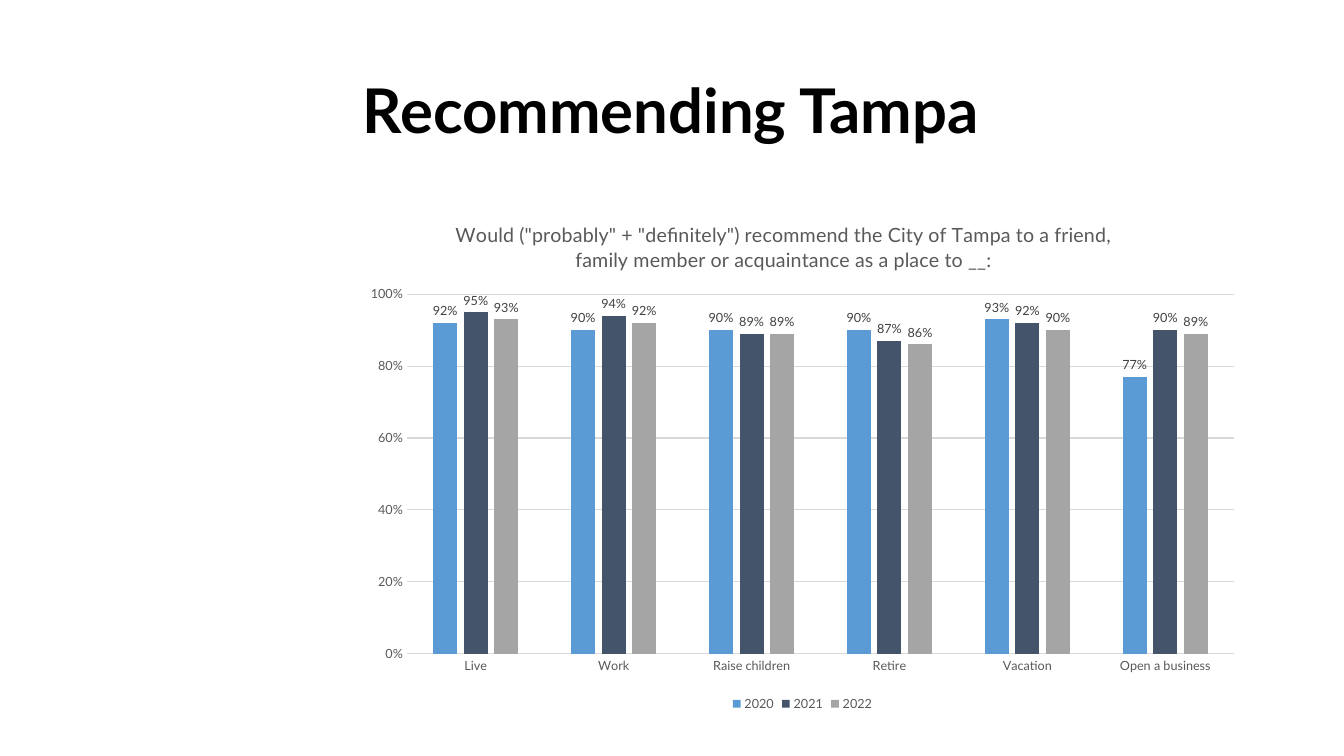
from dataclasses import dataclass

from lxml import etree
from pptx import Presentation, util as u
from pptx.chart.data import CategoryChartData
from pptx.dml.color import RGBColor
from pptx.enum import chart as ch, text
from pptx.oxml.ns import qn


@dataclass(frozen=True)
class Theme:
    font: str = "Lato"
    ink: str = "000000"
    muted: str = "595959"
    label: str = "404040"
    grid: str = "D9D9D9"
    bars: tuple = ("5B9BD5", "44546A", "A5A5A5")
    title_size: int = 44
    chart_title_size: int = 14
    small_size: int = 9


THEME = Theme()
CATEGORIES = ["Live", "Work", "Raise children", "Retire", "Vacation", "Open a business"]
RECOMMEND = {
    "2020": (0.92, 0.9, 0.9, 0.9, 0.93, 0.77),
    "2021": (0.95, 0.94, 0.89, 0.87, 0.92, 0.9),
    "2022": (0.93, 0.92, 0.89, 0.86, 0.9, 0.89),
}
QUESTION = ('Would ("probably" + "definitely") recommend the City of Tampa to a friend, '
            "family member or acquaintance as a place to __:")


def style_font(font, size=THEME.small_size, color=THEME.muted, bold=False):
    font.name, font.size, font.bold = THEME.font, u.Pt(size), bold
    font.color.rgb = RGBColor.from_string(color)


def write_text(tf, content, spacing=None, **style):
    p = tf.paragraphs[0]
    p.line_spacing = spacing
    r = p.add_run()
    r.text = content
    style_font(r.font, **style)


def style_line(line):
    line.color.rgb = RGBColor.from_string(THEME.grid)
    line.width = u.Pt(0.75)


def place(element, index, **fractions):
    """Give a chart part a manual layout in fractions of the chart area."""
    for old in element.findall(qn("c:layout")):
        element.remove(old)
    layout = etree.Element(qn("c:layout"))
    manual = etree.SubElement(layout, qn("c:manualLayout"))
    if "w" in fractions:
        etree.SubElement(manual, qn("c:layoutTarget")).set("val", "inner")
    for name in ("xMode", "yMode"):
        etree.SubElement(manual, qn(f"c:{name}")).set("val", "edge")
    for name, value in fractions.items():
        etree.SubElement(manual, qn(f"c:{name}")).set("val", str(value))
    element.insert(index, layout)


def add_heading(s, left, top, width, height):
    tf = s.shapes.add_textbox(left, top, width, height).text_frame
    tf.word_wrap = True
    tf.vertical_anchor = text.MSO_ANCHOR.MIDDLE
    write_text(tf, "Recommending Tampa", spacing=0.9, size=THEME.title_size,
               color=THEME.ink, bold=True)


def style_axes(chart):
    for axis in (chart.category_axis, chart.value_axis):
        axis.major_tick_mark = axis.minor_tick_mark = ch.XL_TICK_MARK.NONE
        style_font(axis.tick_labels.font)
    style_line(chart.category_axis.format.line)
    values = chart.value_axis
    values.minimum_scale, values.maximum_scale, values.major_unit = 0, 1, 0.2
    values.format.line.fill.background()
    style_line(values.major_gridlines.format.line)
    values.tick_labels.number_format = "0%"
    values.tick_labels.number_format_is_linked = False


def style_bars(plot):
    plot.gap_width, plot.overlap, plot.vary_by_categories = 219, -27, False
    for series, color in zip(plot.series, THEME.bars):
        series.format.fill.solid()
        series.format.fill.fore_color.rgb = RGBColor.from_string(color)
        series.invert_if_negative = False
        labels = series.data_labels
        labels.show_value = True
        labels.number_format, labels.number_format_is_linked = "0%", False
        labels.position = ch.XL_LABEL_POSITION.OUTSIDE_END
        style_font(labels.font, color=THEME.label)


def add_recommend_chart(s, left, top, width, height):
    data = CategoryChartData(number_format="0%")
    data.categories = CATEGORIES
    for year, shares in RECOMMEND.items():
        data.add_series(year, shares)
    chart = s.shapes.add_chart(ch.XL_CHART_TYPE.COLUMN_CLUSTERED,
                               left, top, width, height, data).chart
    style_font(chart.font, size=10, color=THEME.ink)
    title = chart.chart_title
    write_text(title.text_frame, QUESTION, size=THEME.chart_title_size)
    title.text_frame.paragraphs[0].alignment = text.PP_ALIGN.CENTER
    chart.has_legend = True
    chart.legend.position = ch.XL_LEGEND_POSITION.BOTTOM
    chart.legend.include_in_layout = False
    style_font(chart.legend.font)
    style_axes(chart)
    style_bars(chart.plots[0])
    root = chart.element
    place(root.find(".//" + qn("c:title")), 1, x=0.11, y=0.03)
    place(root.find(".//" + qn("c:plotArea")), 0, x=0.06, y=0.18, w=0.92, h=0.7)


def main():
    prs = Presentation()
    prs.slide_width, prs.slide_height = u.Inches(13.33), u.Inches(7.5)
    s = prs.slides.add_slide(prs.slide_layouts[6])
    left, width = u.Inches(3.5), u.Inches(8.92)
    add_heading(s, left, u.Inches(0.4), width, u.Inches(1.45))
    add_recommend_chart(s, left, u.Inches(2), width, u.Inches(5.1))
    prs.save("out.pptx")


if __name__ == "__main__":
    main()
